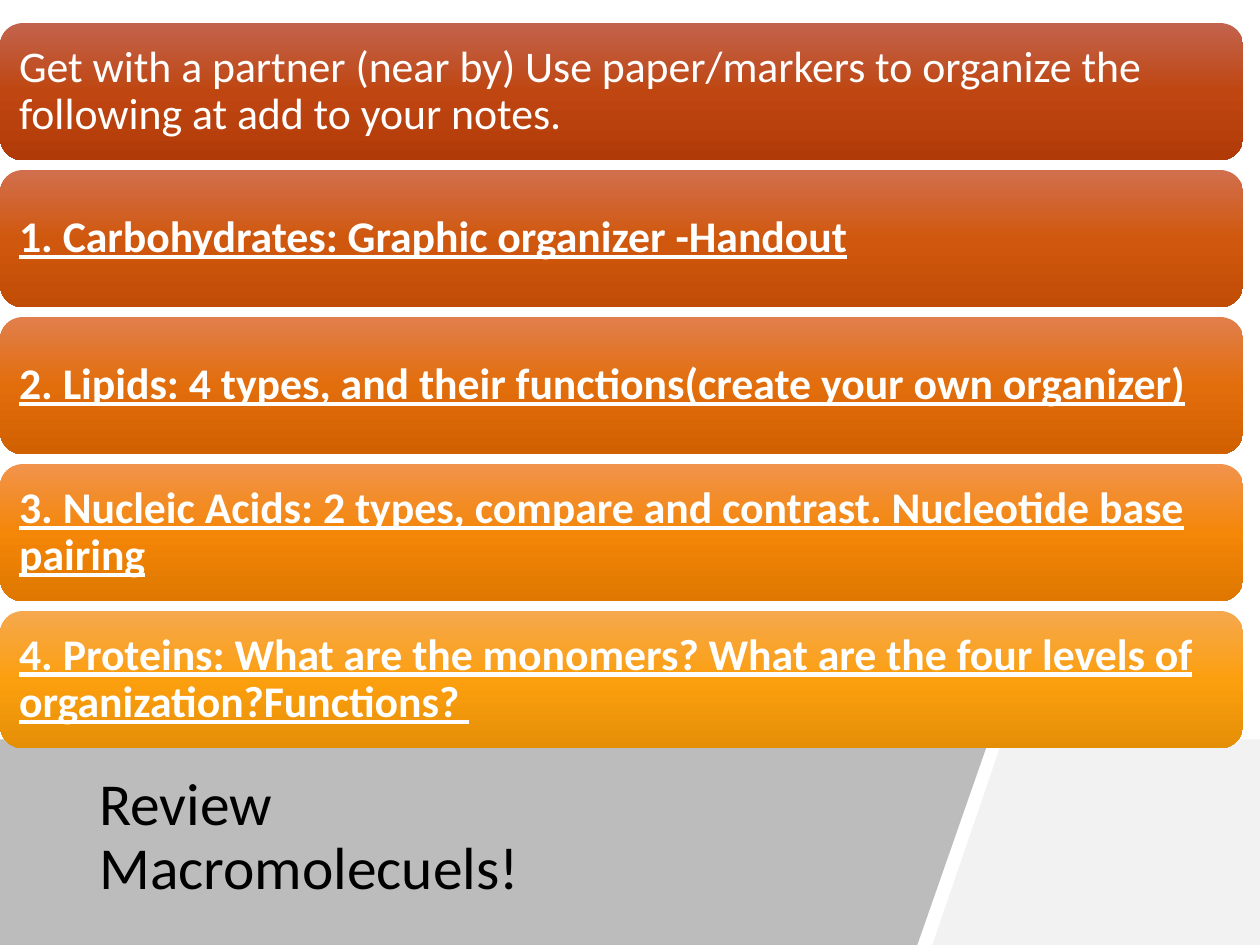
from copy import deepcopy
from dataclasses import dataclass

from lxml import etree
from pptx import Presentation
from pptx import util as u
from pptx.dml.color import RGBColor
from pptx.enum import shapes, text
from pptx.oxml.ns import qn

FONT = "Calibri"
WHITE = RGBColor(0xFF, 0xFF, 0xFF)
BLACK = RGBColor(0x00, 0x00, 0x00)
PALE_GREY = RGBColor(0xF2, 0xF2, 0xF2)
DARK_GREY = RGBColor(0x59, 0x59, 0x59)

# Layout in points
SLIDE_W, SLIDE_H = 720, 540
BAND_TOP = 422.6
BAR_TOP, BAR_W, BAR_H, BAR_PITCH = 13.2, 710.4, 78.4, 84


@dataclass
class Bar:
    text: str
    colors: tuple[str, str, str]
    heading: bool = True


@dataclass
class Panel:
    points: list[tuple[float, float]]
    color: RGBColor
    alpha: int = 100


BARS = [
    Bar("Get with a partner (near by) Use paper/markers to organize the "
        "following at add to your notes. ",
        ("C2634D", "BF4611", "B13B08"), heading=False),
    Bar("1. Carbohydrates: Graphic organizer -Handout",
        ("D16F4D", "D0580E", "C14C05")),
    Bar("2. Lipids: 4 types, and their functions(create your own organizer)",
        ("E17F4C", "E26D0B", "D16001")),
    Bar("3. Nucleic Acids: 2 types, compare and contrast. Nucleotide base pairing",
        ("F1934C", "F48608", "DF7700")),
    Bar("4. Proteins: What are the monomers? What are the four levels of "
        "organization?Functions? ",
        ("F5A84E", "FC9F0E", "E58F07")),
]

PANELS = [
    Panel([(573, BAND_TOP), (SLIDE_W, BAND_TOP), (SLIDE_W, SLIDE_H), (532.8, SLIDE_H)],
          PALE_GREY),
    Panel([(0, BAND_TOP), (565.2, BAND_TOP), (524.2, SLIDE_H), (0, SLIDE_H)],
          DARK_GREY, alpha=40),
]


def set_text(sp, content: str, **font) -> None:
    """Write left-aligned, vertically centred text with the given font values."""
    tf = sp.text_frame
    tf.word_wrap = True
    tf.vertical_anchor = text.MSO_ANCHOR.MIDDLE
    tf.text = content
    p = tf.paragraphs[0]
    p.alignment = text.PP_ALIGN.LEFT
    p.line_spacing = 0.9
    color = font.pop("color")
    for r in p.runs:
        for name, value in font.items():
            setattr(r.font, name, value)
        r.font.color.rgb = color


def fill_gradient(sp, colors: tuple[str, str, str]) -> None:
    """Fill with three evenly spaced stops running from top to bottom."""
    sp.fill.gradient()
    sp.fill.gradient_angle = 270
    stops = sp._element.spPr.find(".//" + qn("a:gsLst"))
    stops.append(deepcopy(stops[-1]))
    for i, (stop, color) in enumerate(zip(sp.fill.gradient_stops, colors)):
        stop.position = i / 2
        stop.color.rgb = RGBColor.from_string(color)


def add_panel(s, panel: Panel) -> None:
    points = [(u.Pt(x), u.Pt(y)) for x, y in panel.points]
    builder = s.shapes.build_freeform(*points[0])
    builder.add_line_segments(points[1:], close=True)
    sp = builder.convert_to_shape()
    sp.shadow.inherit = False
    sp.line.fill.background()
    sp.fill.solid()
    sp.fill.fore_color.rgb = panel.color
    if panel.alpha < 100:
        color = sp._element.spPr.find(qn("a:solidFill"))[0]
        etree.SubElement(color, qn("a:alpha")).set("val", str(panel.alpha * 1000))


def add_bar(s, bar: Bar, top: float) -> None:
    sp = s.shapes.add_shape(shapes.MSO_SHAPE.ROUNDED_RECTANGLE,
                            u.Pt(0), u.Pt(top), u.Pt(BAR_W), u.Pt(BAR_H))
    sp.shadow.inherit = False
    sp.line.fill.background()
    fill_gradient(sp, bar.colors)
    for side in ("left", "top", "right", "bottom"):
        setattr(sp.text_frame, f"margin_{side}", u.Pt(7.2))
    set_text(sp, bar.text, name=FONT, size=u.Pt(25), color=WHITE,
             bold=bar.heading, underline=bar.heading)


def main() -> None:
    prs = Presentation()
    prs.slide_width, prs.slide_height = u.Pt(SLIDE_W), u.Pt(SLIDE_H)
    s = prs.slides.add_slide(prs.slide_layouts[6])

    # Bottom band
    for panel in PANELS:
        add_panel(s, panel)

    # Title
    title = s.shapes.add_textbox(u.Pt(49.7), u.Pt(435.6), u.Pt(477.4), u.Pt(86.4))
    set_text(title, "Review \vMacromolecuels!", name=FONT, size=u.Pt(34), color=BLACK)

    # Stacked instruction bars
    for i, bar in enumerate(BARS):
        add_bar(s, bar, BAR_TOP + i * BAR_PITCH)

    prs.save("out.pptx")


if __name__ == "__main__":
    main()
